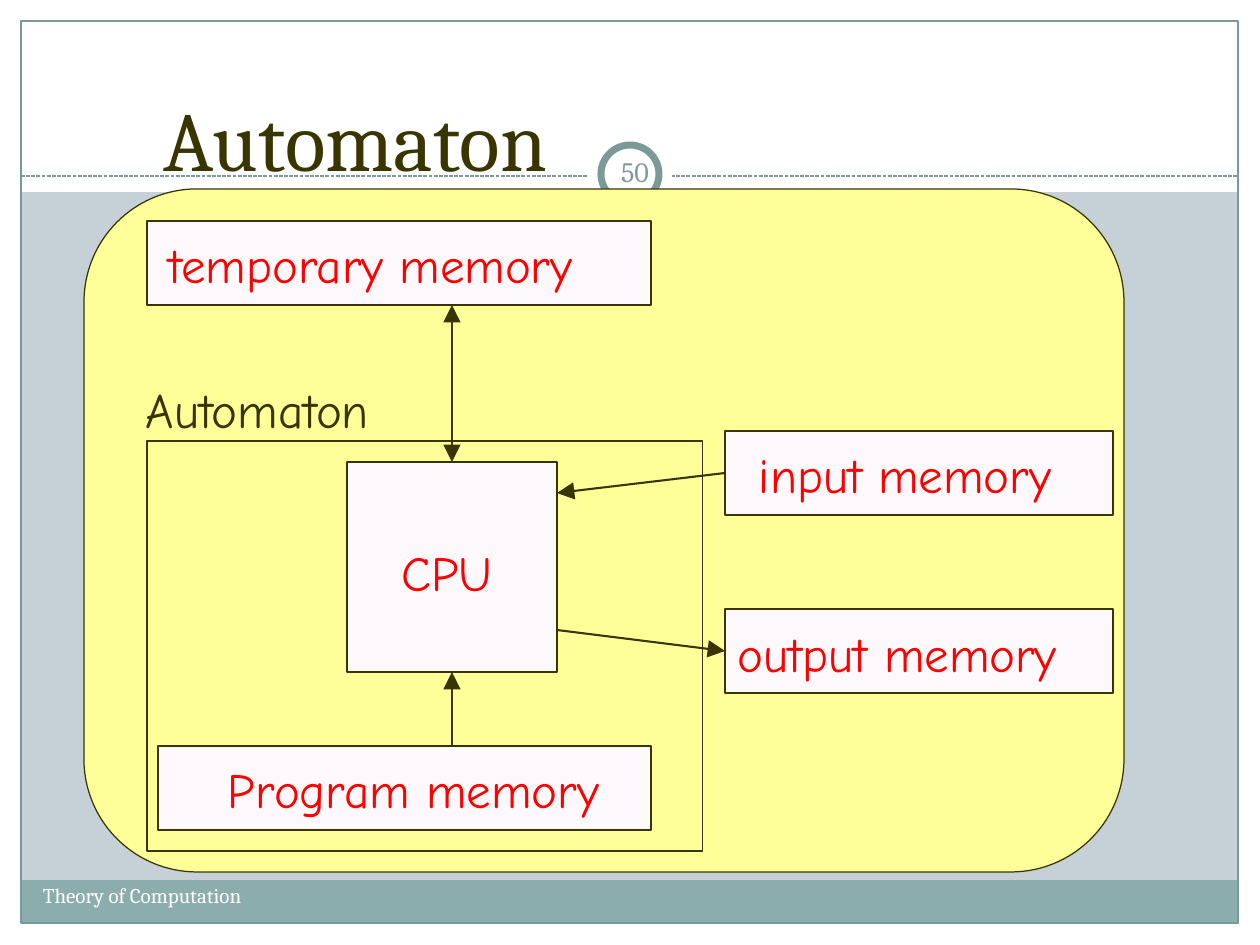
from lxml.etree import SubElement
from pptx import Presentation
from pptx.dml.color import RGBColor
from pptx.enum.dml import MSO_LINE
from pptx.enum.shapes import MSO_CONNECTOR, MSO_SHAPE
from pptx.enum.text import MSO_ANCHOR, PP_ALIGN
from pptx.oxml.ns import qn
from pptx.util import Emu, Pt

WHITE = RGBColor(0xFF, 0xFF, 0xFF)
SKY = RGBColor(0xC5, 0xD1, 0xD7)
TEAL = RGBColor(0x8C, 0xAD, 0xAE)
SLATE = RGBColor(0x7C, 0x99, 0x9A)
YELLOW = RGBColor(0xFF, 0xFF, 0x99)
OLIVE = RGBColor(0x38, 0x35, 0x00)
PALE = RGBColor(0xFD, 0xF8, 0xFC)
RED = RGBColor(0xFF, 0x00, 0x00)

SERIF, COMIC = "Cambria", "Comic Neue"
LEFT, CENTER = PP_ALIGN.LEFT, PP_ALIGN.CENTER
TOP, MIDDLE, BOTTOM = MSO_ANCHOR.TOP, MSO_ANCHOR.MIDDLE, MSO_ANCHOR.BOTTOM
WIDTH, HEIGHT = 1260, 945
THIN = 0.72

BACKDROP = [
    (MSO_SHAPE.RECTANGLE, (0, 924, WIDTH, 21), WHITE, None, 0),
    (MSO_SHAPE.RECTANGLE, (0, 0, WIDTH, 192), WHITE, None, 0),
    (MSO_SHAPE.RECTANGLE, (0, 0, 21, HEIGHT), WHITE, None, 0),
    (MSO_SHAPE.RECTANGLE, (1239, 0, 21, HEIGHT), WHITE, None, 0),
    (MSO_SHAPE.RECTANGLE, (21, 880, 1217, 43), TEAL, None, 0),
    (MSO_SHAPE.RECTANGLE, (21, 21, 1217, 902), None, SLATE, 0.75),
]
BADGE = [
    (MSO_SHAPE.OVAL, (588, 132, 84, 84), WHITE, None, 0),
    (MSO_SHAPE.OVAL, (601, 145, 58, 58), WHITE, SLATE, 4),
]
PANEL = (84, 189, 1040, 683)
PANEL_RADIUS = 113
AUTOMATON_FRAME = (147, 441, 556, 410)

LABELS = [
    ("Automaton", (126, 83, 459, 105), 48, SERIF, OLIVE, CENTER, BOTTOM),
    ("Theory of Computation", (43, 883, 494, 50), 12, SERIF, WHITE, LEFT, TOP),
    ("50", (606, 141, 58, 61), 16, SERIF, SLATE, CENTER, MIDDLE),
    ("Automaton", (146, 380, 251, 62), 28, COMIC, OLIVE, LEFT, TOP),
]
UNITS = [
    ("CPU", (347, 462, 210, 210), 54, 80, LEFT),
    ("input memory", (725, 431, 388, 84), 34, 14, LEFT),
    ("output memory", (725, 609, 388, 84), 13, 14, LEFT),
    ("Program memory", (158, 746, 493, 84), 18, 14, CENTER),
    ("temporary memory", (147, 221, 504, 84), 22, 14, LEFT),
]
ARROWS = [
    ((452, 305), (452, 462), True),
    ((725, 473), (557, 493), False),
    ((557, 630), (725, 651), False),
    ((452, 746), (452, 672), False),
]


def px(value):
    return Emu(round(value * 914400 / 126))


def add_outline(page, kind, area, fill, line, weight):
    shape = page.shapes.add_shape(kind, *map(px, area))
    shape.shadow.inherit = False
    if fill is None:
        shape.fill.background()
    else:
        shape.fill.solid()
        shape.fill.fore_color.rgb = fill
    if line is None:
        shape.line.fill.background()
    else:
        shape.line.color.rgb = line
        shape.line.width = Pt(weight)
    return shape


def write(box, text, size, font, color, align, anchor, left=0, top=0):
    frame = box.text_frame
    frame.word_wrap = True
    frame.vertical_anchor = anchor
    frame.margin_left, frame.margin_top = px(left), px(top)
    frame.margin_right = frame.margin_bottom = 0
    para = frame.paragraphs[0]
    para.text = text
    para.alignment = align
    para.font.size = Pt(size)
    para.font.name = font
    para.font.color.rgb = color


def add_line(page, start, end, color, weight):
    line = page.shapes.add_connector(MSO_CONNECTOR.STRAIGHT, *map(px, start + end))
    line.line.color.rgb = color
    line.line.width = Pt(weight)
    SubElement(line._element.spPr, qn("a:effectLst"))
    return line


def add_arrow(page, start, end, both_ways):
    arrow = add_line(page, start, end, OLIVE, 1.2)
    for tag in ["a:headEnd", "a:tailEnd"] if both_ways else ["a:tailEnd"]:
        SubElement(arrow.line._get_or_add_ln(), qn(tag), type="triangle", w="lg", len="lg")


def main():
    deck = Presentation()
    deck.slide_width, deck.slide_height = px(WIDTH), px(HEIGHT)
    page = deck.slides.add_slide(deck.slide_layouts[6])
    page.background.fill.solid()
    page.background.fill.fore_color.rgb = SKY

    for part in BACKDROP:
        add_outline(page, *part)
    rule = add_line(page, (21, 176), (1239, 176), SLATE, 0.75)
    rule.line.dash_style = MSO_LINE.SQUARE_DOT
    for part in BADGE:
        add_outline(page, *part)

    panel = add_outline(page, MSO_SHAPE.ROUNDED_RECTANGLE, PANEL, YELLOW, OLIVE, THIN)
    panel.adjustments[0] = PANEL_RADIUS / min(PANEL[2:])

    for text, area, left, top, align in UNITS:
        unit = add_outline(page, MSO_SHAPE.RECTANGLE, area, PALE, OLIVE, THIN)
        write(unit, text, 28, COMIC, RED, align, TOP, left, top)
    for arrow in ARROWS:
        add_arrow(page, *arrow)
    add_outline(page, MSO_SHAPE.RECTANGLE, AUTOMATON_FRAME, None, OLIVE, THIN)
    for text, area, *style in LABELS:
        write(page.shapes.add_textbox(*map(px, area)), text, *style)

    deck.save("out.pptx")


if __name__ == "__main__":
    main()
